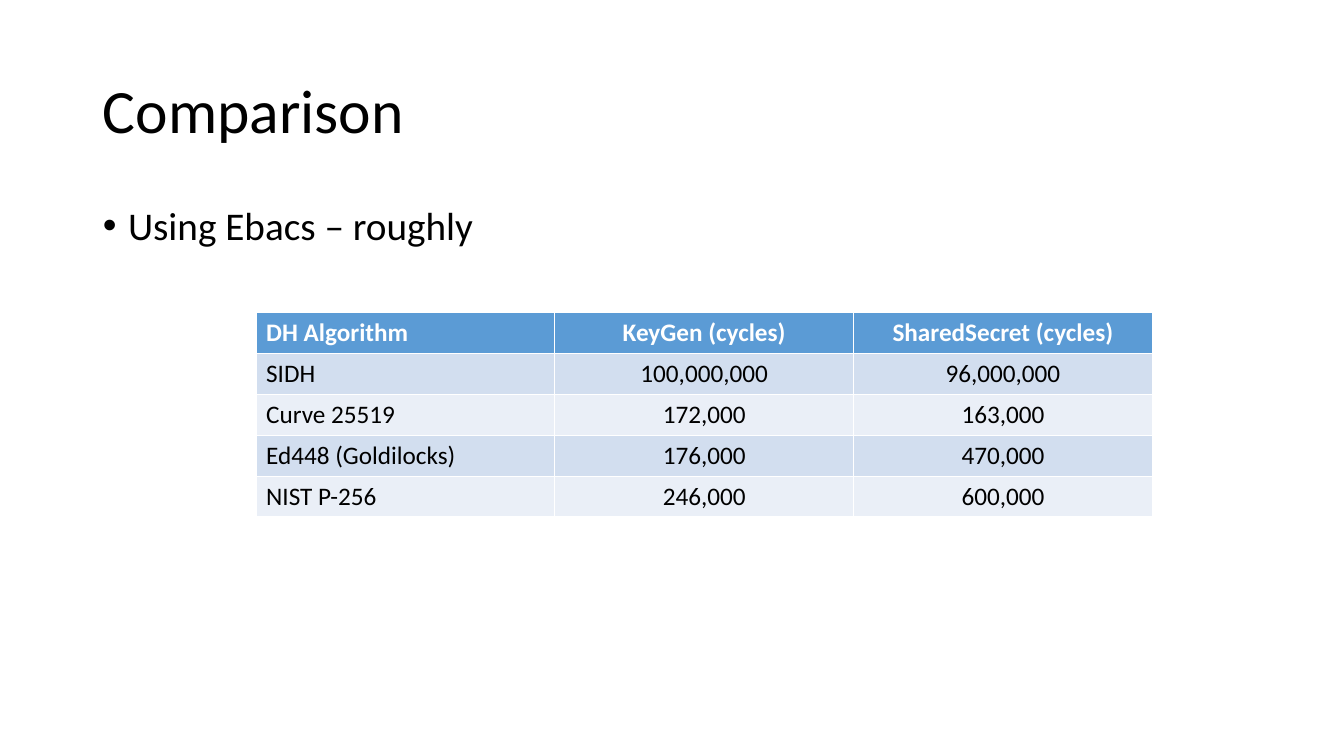
from pptx import Presentation
from pptx import util as u
from pptx.dml import color
from pptx.enum import text

FONT = "Calibri"
HEADER_FILL = "5B9BD5"
BAND_FILLS = ["D2DEEF", "EAEFF7"]
ROWS = [
    ["DH Algorithm", "KeyGen (cycles)", "SharedSecret (cycles)"],
    ["SIDH", "100,000,000", "96,000,000"],
    ["Curve 25519", "172,000", "163,000"],
    ["Ed448 (Goldilocks)", "176,000", "470,000"],
    ["NIST P-256", "246,000", "600,000"],
]


def rgb(value):
    return color.RGBColor.from_string(value)


def place(shape, left, top, width, height):
    shape.left, shape.top = u.Inches(left), u.Inches(top)
    shape.width, shape.height = u.Inches(width), u.Inches(height)


def format_paragraph(paragraph, size, font_color="000000", bold=False,
                     alignment=text.PP_ALIGN.LEFT):
    paragraph.alignment = alignment
    paragraph.font.name = FONT
    paragraph.font.size = u.Pt(size)
    paragraph.font.bold = bold
    paragraph.font.color.rgb = rgb(font_color)


def fill_title(shape, wording):
    place(shape, 0.92, 0.4, 11.5, 1.45)
    shape.text_frame.text = wording
    shape.text_frame.vertical_anchor = text.MSO_ANCHOR.MIDDLE
    paragraph = shape.text_frame.paragraphs[0]
    format_paragraph(paragraph, 44)
    paragraph.line_spacing = 0.9


def fill_body(shape, wording):
    place(shape, 0.92, 2, 11.5, 4.76)
    shape.text_frame.text = wording
    paragraph = shape.text_frame.paragraphs[0]
    format_paragraph(paragraph, 28)
    paragraph.line_spacing = 0.9
    paragraph.space_before = u.Pt(10)
    properties = paragraph._p.get_or_add_pPr()
    properties.set("marL", str(u.Inches(0.25)))
    properties.set("indent", str(u.Inches(-0.25)))


def add_comparison_table(slide, rows):
    table = slide.shapes.add_table(
        len(rows), len(rows[0]), u.Inches(2.54), u.Inches(3.1),
        u.Inches(8.89), u.Inches(2.03)).table
    for row_index, row in enumerate(rows):
        header = row_index == 0
        fill = HEADER_FILL if header else BAND_FILLS[(row_index - 1) % 2]
        for column_index, wording in enumerate(row):
            cell = table.cell(row_index, column_index)
            cell.text = wording
            cell.fill.solid()
            cell.fill.fore_color.rgb = rgb(fill)
            format_paragraph(
                cell.text_frame.paragraphs[0], 18,
                "FFFFFF" if header else "000000", header,
                text.PP_ALIGN.CENTER if column_index else text.PP_ALIGN.LEFT)


def main():
    presentation = Presentation()
    presentation.slide_width = u.Inches(13.33)
    presentation.slide_height = u.Inches(7.5)
    slide = presentation.slides.add_slide(presentation.slide_layouts[1])
    fill_title(slide.shapes.title, "Comparison")
    fill_body(slide.placeholders[1], "Using Ebacs – roughly")
    add_comparison_table(slide, ROWS)
    presentation.save("out.pptx")


if __name__ == "__main__":
    main()
